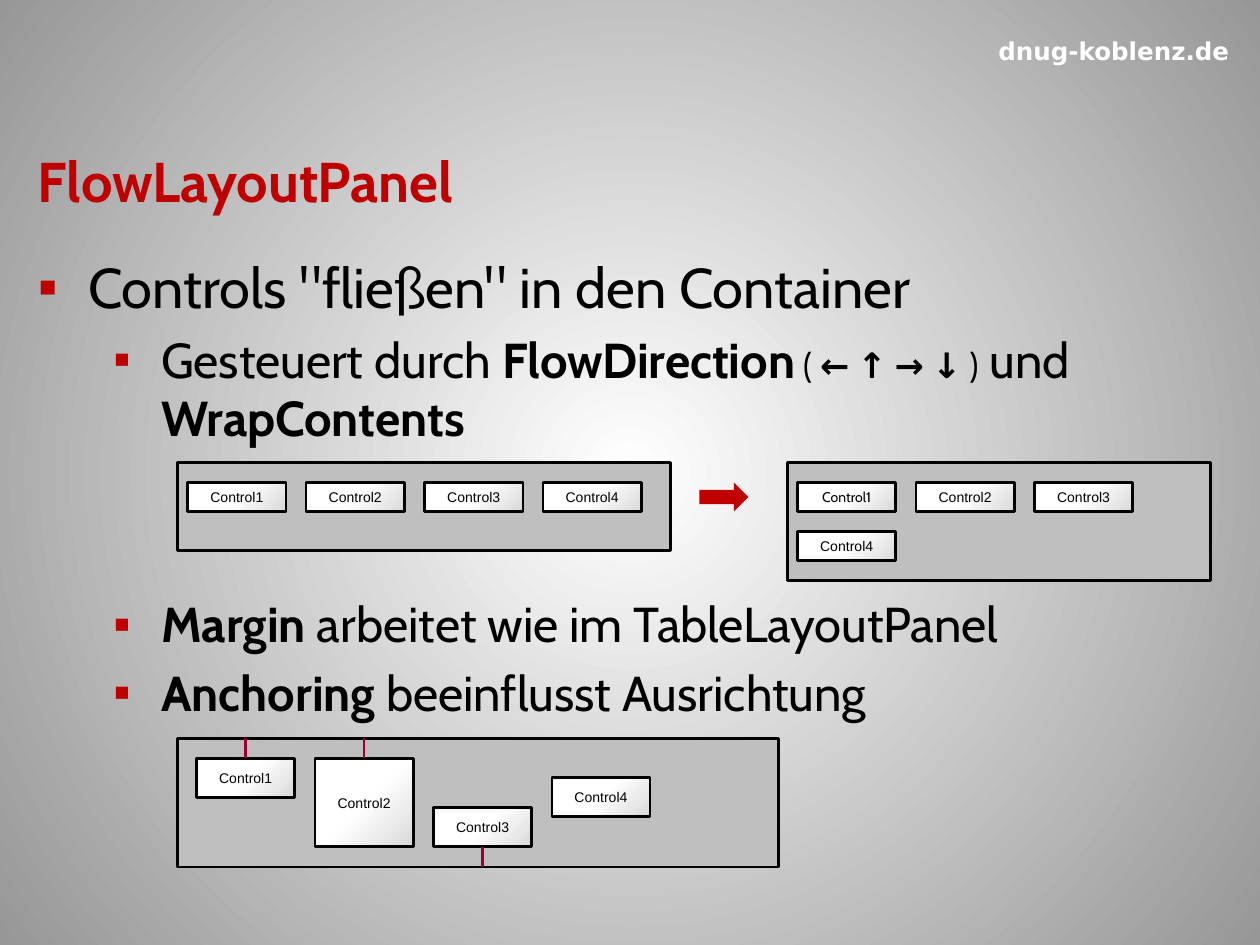
from dataclasses import dataclass

from lxml.etree import SubElement
from pptx import Presentation
from pptx.dml.color import RGBColor
from pptx.enum.shapes import MSO_CONNECTOR as Connector, MSO_SHAPE as Shape
from pptx.enum.text import MSO_ANCHOR as Anchor, MSO_AUTO_SIZE as AutoSize, PP_ALIGN as Align
from pptx.oxml import parse_xml
from pptx.oxml.ns import nsdecls, qn
from pptx.util import Inches, Pt


@dataclass(frozen=True)
class Theme:
    accent: str = "C00000"
    anchor_line: str = "990033"
    ink: str = "000000"
    light: str = "FFFFFF"
    edge: str = "979797"
    panel: str = "BFBFBF"
    control_shade: str = "D9D9D9"
    font: str = "Cabin"
    control_font: str = "Arial"
    site_font: str = "DejaVu Sans"
    heading: int = 32
    detail: int = 28
    arrows: int = 20
    site: int = 14
    control: int = 8
    stroke: float = 1.5


THEME = Theme()
CONTROL_W, CONTROL_H = 0.78, 0.23
PITCH = 0.94
TOP_GAP = 0.16
ROW_PITCH = 0.39


def rgb(value):
    return RGBColor.from_string(value)


def place(shape, box):
    for side, length in zip(("left", "top", "width", "height"), box):
        setattr(shape, side, Inches(length))


def format_frame(frame, **values):
    for key, value in values.items():
        setattr(frame, key, value)


def add_run(paragraph, text, size, color=THEME.ink, name=THEME.font, bold=False):
    run = paragraph.add_run()
    run.text = text
    for key, value in {"size": Pt(size), "name": name, "bold": bold}.items():
        setattr(run.font, key, value)
    run.font.color.rgb = rgb(color)
    return run


def set_stops(fill, *stops):
    fill.gradient()
    for stop, (position, color) in zip(fill.gradient_stops, stops):
        stop.position = position
        stop.color.rgb = rgb(color)


def paint_background(slide):
    """Radial gradient, light in the middle."""
    set_stops(slide.background.fill, (0, THEME.light), (1, THEME.edge))
    linear = slide.element.find(".//" + qn("a:lin"))
    linear.getparent().replace(linear, parse_xml(
        f'<a:path {nsdecls("a")} path="circle">'
        '<a:fillToRect l="50000" t="50000" r="50000" b="50000"/></a:path>'))


def add_site(slide, box):
    site = slide.shapes.add_textbox(*map(Inches, box))
    format_frame(site.text_frame, word_wrap=True, vertical_anchor=Anchor.MIDDLE)
    paragraph = site.text_frame.paragraphs[0]
    paragraph.alignment = Align.CENTER
    add_run(paragraph, "dnug-koblenz.de", THEME.site, THEME.light, THEME.site_font, True)


def fill_title(title, box):
    place(title, box)
    format_frame(title.text_frame, auto_size=AutoSize.NONE, vertical_anchor=Anchor.MIDDLE)
    paragraph = title.text_frame.paragraphs[0]
    paragraph.alignment = Align.LEFT
    run = add_run(paragraph, "FlowLayoutPanel", THEME.heading, THEME.accent, bold=True)
    run.font.fill._xPr.find(qn("a:solidFill")).addnext(parse_xml(
        f'<a:effectLst {nsdecls("a")}><a:outerShdw blurRad="38100" dist="38100" dir="2700000">'
        '<a:srgbClr val="000000"><a:alpha val="43000"/></a:srgbClr></a:outerShdw></a:effectLst>'))


def add_bullet(paragraph, margin, hanging):
    properties = paragraph._p.get_or_add_pPr()
    properties.set("marL", str(Inches(margin)))
    properties.set("indent", str(-Inches(hanging)))
    color = SubElement(properties, qn("a:buClr"))
    SubElement(color, qn("a:srgbClr"), val=THEME.accent)
    SubElement(properties, qn("a:buChar"), char="▪")


def fill_body(body, box):
    place(body, box)
    frame = body.text_frame
    format_frame(frame, auto_size=AutoSize.NONE, vertical_anchor=Anchor.TOP)
    big, small = THEME.detail, THEME.arrows
    # level, space before, runs of (text, size, bold)
    points = [
        (0, 0, [('Controls "fließen" in den Container', THEME.heading, False)]),
        (1, 5.6, [("Gesteuert durch ", big, False), ("FlowDirection", big, True),
                  (" ( ", small, False), ("← ↑ → ↓", small, True), (" )", small, False),
                  (" und ", big, False), ("WrapContents", big, True)]),
        (1, 84, [("Margin", big, True), (" arbeitet wie im TableLayoutPanel", big, False)]),
        (1, 5.6, [("Anchoring", big, True), (" beeinflusst Ausrichtung", big, False)]),
    ]
    for index, (level, before, runs) in enumerate(points):
        paragraph = frame.add_paragraph() if index else frame.paragraphs[0]
        paragraph.level = level
        paragraph.space_before = Pt(before)
        add_bullet(paragraph, *((0.98, 0.38) if level else (0.4, 0.4)))
        for text, size, bold in runs:
            add_run(paragraph, text, size, bold=bold)


def add_block(group, kind, box):
    block = group.shapes.add_shape(kind, *map(Inches, box))
    block.shadow.inherit = False
    block.line.color.rgb = rgb(THEME.ink)
    block.line.width = Pt(THEME.stroke)
    return block


def add_panel(group, box):
    panel = add_block(group, Shape.RECTANGLE, box)
    panel.fill.solid()
    panel.fill.fore_color.rgb = rgb(THEME.panel)


def add_control(group, number, box, font=THEME.control_font):
    control = add_block(group, Shape.RECTANGLE, box)
    set_stops(control.fill, (0, THEME.control_shade), (0.5, THEME.light))
    control.fill.gradient_angle = 135
    format_frame(control.text_frame, word_wrap=False, vertical_anchor=Anchor.MIDDLE)
    paragraph = control.text_frame.paragraphs[0]
    paragraph.alignment = Align.CENTER
    add_run(paragraph, f"Control{number}", THEME.control, name=font)


def add_flow_panel(group, box, columns, first_font=THEME.control_font):
    """Panel whose four controls wrap after the given number of columns."""
    left, top = box[:2]
    add_panel(group, box)
    for index in range(4):
        row, column = divmod(index, columns)
        add_control(group, index + 1,
                    (left + 0.08 + column * PITCH, top + TOP_GAP + row * ROW_PITCH,
                     CONTROL_W, CONTROL_H),
                    THEME.control_font if index else first_font)


def add_arrow(group, box):
    arrow = add_block(group, Shape.RIGHT_ARROW, box)
    arrow.fill.solid()
    arrow.fill.fore_color.rgb = rgb(THEME.accent)
    arrow.line.fill.background()


def add_anchor_line(group, x, start, end):
    line = group.shapes.add_connector(Connector.STRAIGHT, *map(Inches, (x, start, x, end)))
    line.line.color.rgb = rgb(THEME.anchor_line)
    line.line.width = Pt(THEME.stroke)
    SubElement(line._element.spPr, qn("a:effectLst"))


def add_anchoring_panel(group, box):
    left, top, _, height = box
    add_panel(group, box)
    # offset from panel top, control height, anchored edges
    controls = [(TOP_GAP, 0.31, "top"), (TOP_GAP, 0.7, "top"),
                (0.55, 0.31, "bottom"), (0.31, 0.31, None)]
    for index, (offset, control_height, edge) in enumerate(controls):
        x = left + 0.15 + index * PITCH
        add_control(group, index + 1, (x, top + offset, CONTROL_W, control_height))
        middle = x + CONTROL_W / 2
        if edge == "top":
            add_anchor_line(group, middle, top, top + offset)
        elif edge == "bottom":
            add_anchor_line(group, middle, top + offset + control_height, top + height)


def main():
    deck = Presentation()
    deck.slide_width, deck.slide_height = Inches(10), Inches(7.5)
    slide = deck.slides.add_slide(deck.slide_layouts[1])
    paint_background(slide)
    add_site(slide, (7.68, 0.21, 2.32, 0.39))
    fill_title(slide.shapes.title, (0.2, 0.91, 9.61, 1.04))
    fill_body(slide.placeholders[1], (0.2, 1.95, 9.61, 5.55))

    flow = slide.shapes.add_group_shape()
    add_flow_panel(flow, (6.25, 3.67, 3.36, 0.94), columns=3, first_font=THEME.font)
    add_flow_panel(flow, (1.41, 3.67, 3.91, 0.7), columns=4)
    add_arrow(flow, (5.55, 3.83, 0.39, 0.23))
    add_anchoring_panel(slide.shapes.add_group_shape(), (1.41, 5.86, 4.77, 1.02))
    deck.save("out.pptx")


if __name__ == "__main__":
    main()
